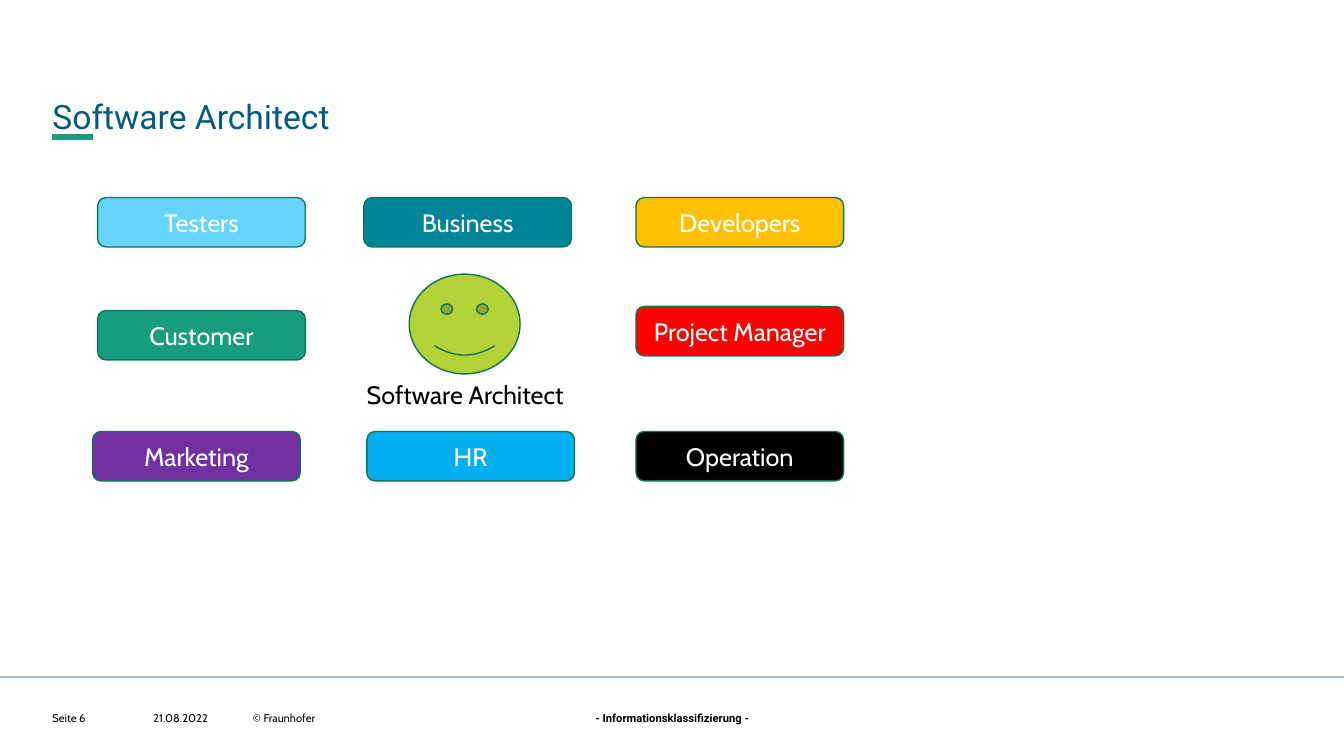
from lxml.etree import SubElement
from pptx import Presentation
from pptx.dml.color import RGBColor
from pptx.enum.shapes import MSO_CONNECTOR, MSO_SHAPE
from pptx.enum.text import MSO_ANCHOR, MSO_AUTO_SIZE, PP_ALIGN
from pptx.oxml.ns import qn
from pptx.util import Pt

WHITE = RGBColor(0xFF, 0xFF, 0xFF)
BLACK = RGBColor(0x00, 0x00, 0x00)
NAVY = RGBColor(0x00, 0x5B, 0x7F)
GREEN = RGBColor(0x17, 0x9C, 0x7D)
DARK_GREEN = RGBColor(0x11, 0x73, 0x5C)
GREY = RGBColor(0xA6, 0xBB, 0xC8)
LIME = RGBColor(0xB2, 0xD2, 0x35)
YELLOW = RGBColor(0xFF, 0xC0, 0x00)
RED = RGBColor(0xFF, 0x00, 0x00)
LIGHT_BLUE = RGBColor(0x66, 0xD4, 0xFF)
PURPLE = RGBColor(0x70, 0x30, 0xA0)
TEAL = RGBColor(0x00, 0x85, 0x98)
BLUE = RGBColor(0x00, 0xB0, 0xF0)

HEADING_FONT = "Roboto"
BODY_FONT = "Cabin"
LEFT_MARGIN = 37.44
FOOTER_TOP = 508.3
FOOTER_HEIGHT = 9.4
ROLE_WIDTH = 148.3
ROLE_HEIGHT = 35.3

ROLES = [
    ("Developers", 454.3, 141.1, YELLOW),
    ("Project Manager", 454.3, 218.9, RED),
    ("Operation", 454.3, 308.2, BLACK),
    ("Testers", 69.8, 141.1, LIGHT_BLUE),
    ("Customer", 69.8, 221.8, GREEN),
    ("Marketing", 66.2, 308.2, PURPLE),
    ("Business", 259.9, 141.1, TEAL),
    ("HR", 262.1, 308.2, BLUE),
]
FOOTER_FIELDS = [
    ("21.08.2022", 109.4, 56.9),
    ("Seite 6", LEFT_MARGIN, 56.9),
    ("© Fraunhofer", 180.7, 232.6),
]


class SlideBuilder:
    """Draws styled elements on the current slide, with lengths in points."""

    def __init__(self, slide):
        self.slide = slide

    def set_text(self, shape, text, size, color, font=BODY_FONT, bold=False,
                 align=PP_ALIGN.LEFT, anchor=MSO_ANCHOR.MIDDLE, inset=None, wrap=True):
        text_frame = shape.text_frame
        text_frame.text = text
        text_frame.word_wrap = wrap
        text_frame.auto_size = MSO_AUTO_SIZE.NONE
        text_frame.vertical_anchor = anchor
        if inset is not None:
            text_frame.margin_left = text_frame.margin_right = Pt(inset)
            text_frame.margin_top = text_frame.margin_bottom = Pt(inset)
        paragraph = text_frame.paragraphs[0]
        paragraph.alignment = align
        run_font = paragraph.runs[0].font
        run_font.name = font
        run_font.size = Pt(size)
        run_font.bold = bold
        run_font.color.rgb = color
        return paragraph

    def title(self, text, left, top, width, height):
        shape = self.slide.shapes.title
        shape.left, shape.top = Pt(left), Pt(top)
        shape.width, shape.height = Pt(width), Pt(height)
        paragraph = self.set_text(shape, text, 24, NAVY, HEADING_FONT,
                                  anchor=MSO_ANCHOR.TOP, inset=0)
        paragraph.line_spacing = 1.1

    def text(self, text, left, top, width, height, size, **style):
        shape = self.slide.shapes.add_textbox(Pt(left), Pt(top), Pt(width), Pt(height))
        self.set_text(shape, text, size, BLACK, **style)

    def rule(self, left, top, width, color, weight):
        line = self.slide.shapes.add_connector(
            MSO_CONNECTOR.STRAIGHT, Pt(left), Pt(top), Pt(left + width), Pt(top))
        line.line.color.rgb = color
        line.line.width = Pt(weight)
        SubElement(line._element.spPr, qn("a:effectLst"))

    def shape(self, kind, left, top, width, height, fill):
        shape = self.slide.shapes.add_shape(kind, Pt(left), Pt(top), Pt(width), Pt(height))
        shape.shadow.inherit = False
        shape.fill.solid()
        shape.fill.fore_color.rgb = fill
        shape.line.color.rgb = DARK_GREEN
        shape.line.width = Pt(1)
        return shape

    def role(self, name, left, top, fill):
        box = self.shape(MSO_SHAPE.ROUNDED_RECTANGLE, left, top, ROLE_WIDTH, ROLE_HEIGHT, fill)
        self.set_text(box, name, 18, WHITE, align=PP_ALIGN.CENTER)


def main():
    presentation = Presentation()
    presentation.slide_width = Pt(960)
    presentation.slide_height = Pt(540)
    builder = SlideBuilder(presentation.slides.add_slide(presentation.slide_layouts[5]))

    builder.rule(LEFT_MARGIN, 97.9, 28.8, GREEN, 4)
    builder.rule(0, 483.8, 960, GREY, 1.5)
    builder.title("Software Architect", LEFT_MARGIN, 65.5, 884.2, 30.2)

    builder.text("- Informationsklassifizierung -", 423.4, FOOTER_TOP, 113.8, FOOTER_HEIGHT, 8,
                 font=HEADING_FONT, bold=True, align=PP_ALIGN.CENTER,
                 anchor=MSO_ANCHOR.TOP, inset=0, wrap=False)
    for text, left, width in FOOTER_FIELDS:
        builder.text(text, left, FOOTER_TOP, width, FOOTER_HEIGHT, 8, inset=0)

    builder.shape(MSO_SHAPE.SMILEY_FACE, 292.3, 195.8, 79.2, 71.3, LIME)
    for name, left, top, fill in ROLES:
        builder.role(name, left, top, fill)
    builder.text("Software Architect", 254.9, 267.1, 216, 28.8, 18, anchor=MSO_ANCHOR.TOP)

    presentation.save("out.pptx")


if __name__ == "__main__":
    main()
